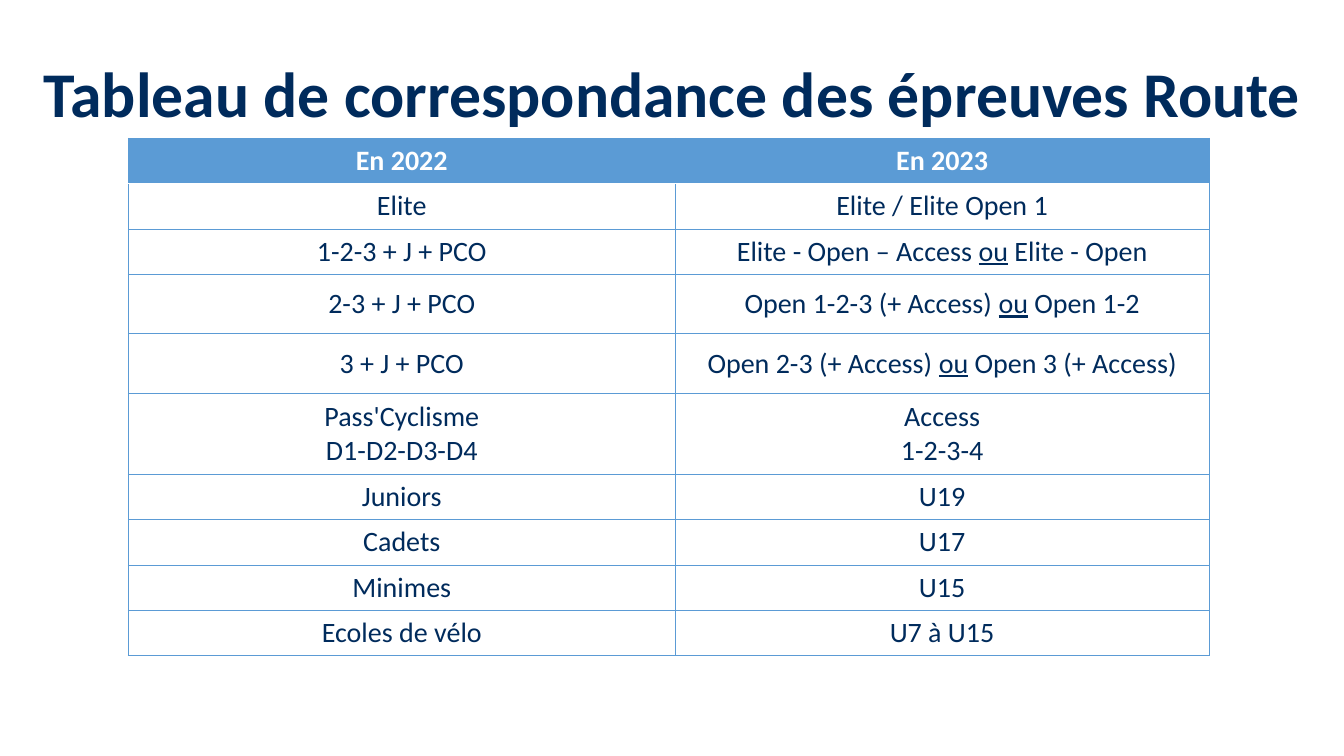
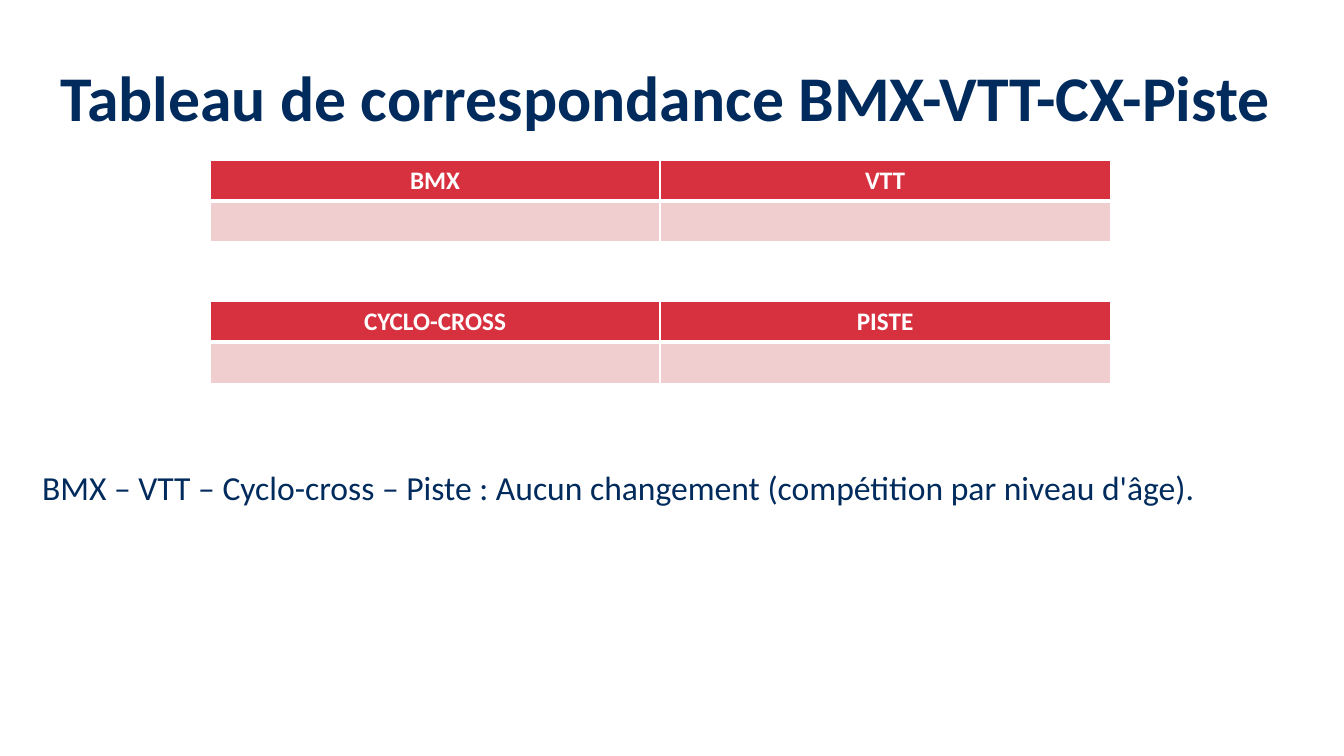
from pptx import Presentation
from pptx.dml.color import RGBColor
from pptx.enum.text import MSO_ANCHOR as Anchor, PP_ALIGN as Align
from pptx.oxml import parse_xml
from pptx.oxml.ns import nsdecls
from pptx.util import Pt

# Shared style
FONT = "Calibri"
NAVY, WHITE, BLUE, RED, PINK = "002B5C", "FFFFFF", "5B9BD5", "D7313F", "F0CECF"
MARGIN, CONTENT_W = 23, 914.5

# Content: underscores enclose underlined words
ROUTE = [
    ("En 2022", "En 2023"),
    ("Elite", "Elite / Elite Open 1"),
    ("1-2-3 + J + PCO", "Elite - Open – Access _ou_ Elite - Open"),
    ("2-3 + J + PCO", "Open 1-2-3 (+ Access) _ou_ Open 1-2"),
    ("3 + J + PCO", "Open 2-3 (+ Access) _ou_ Open 3 (+ Access)"),
    ("Pass'Cyclisme\nD1-D2-D3-D4", "Access\n1-2-3-4"),
    ("Juniors", "U19"),
    ("Cadets", "U17"),
    ("Minimes", "U15"),
    ("Ecoles de vélo", "U7 à U15"),
]
ROUTE_HEIGHTS = [32.4] * 3 + [42.5] * 2 + [57.9] + [32.4] * 4
DISCIPLINES = [("BMX", "VTT"), ("CYCLO-CROSS", "PISTE")]


def rgb(color):
    return RGBColor.from_string(color)


def write(tf, text, size, color, bold=False, align=Align.CENTER, spacing=None):
    for i, line in enumerate(text.split("\n")):
        p = tf.add_paragraph() if i else tf.paragraphs[0]
        p.alignment, p.line_spacing = align, spacing
        for j, part in enumerate(line.split("_")):
            r = p.add_run()
            r.text = part
            if j % 2:
                r.font.underline = True
        font = p.font
        font.name, font.size, font.bold = FONT, Pt(size), bold
        font.color.rgb = rgb(color)


def add_text(s, text, left, top, height, size, **style):
    tf = s.shapes.add_textbox(Pt(left), Pt(top), Pt(CONTENT_W), Pt(height)).text_frame
    tf.word_wrap = True
    tf.vertical_anchor = Anchor.MIDDLE
    write(tf, text, size, NAVY, **style)


def add_title(s, text, left, top):
    add_text(s, text, left, top, 65.5, 45.5, bold=True, spacing=0.75)


def set_borders(cell, left, right, top, bottom):
    tc_pr = cell._tc.get_or_add_tcPr()
    for i, (side, (color, width)) in enumerate(zip("LRTB", (left, right, top, bottom))):
        tc_pr.insert(i, parse_xml(
            f'<a:ln{side} {nsdecls("a")} w="{Pt(width)}"><a:solidFill>'
            f'<a:srgbClr val="{color}"/></a:solidFill></a:ln{side}>'))


def add_table(s, rows, left, top, widths, heights, size, header, body, line, rule,
              anchor=Anchor.TOP):
    """Header and body are fills; line is the cell border, rule the one below the header."""
    frame = s.shapes.add_table(len(rows), len(widths), Pt(left), Pt(top),
                               Pt(sum(widths)), Pt(sum(heights)))
    table = frame.table
    table.horz_banding = False
    for col, width in zip(table.columns, widths):
        col.width = Pt(width)
    for i, (texts, height) in enumerate(zip(rows, heights)):
        table.rows[i].height = Pt(height)
        for j, text in enumerate(texts):
            cell = table.cell(i, j)
            cell.vertical_anchor = anchor
            cell.fill.solid()
            cell.fill.fore_color.rgb = rgb(body if i else header)
            set_borders(cell, line, line, rule if i == 1 else line, line if i else rule)
            write(cell.text_frame, text, size, NAVY if i else WHITE, bold=not i)


def route_slide(s):
    add_title(s, "Tableau de correspondance des épreuves Route", MARGIN, 39)
    add_table(s, ROUTE, 91.5, 98.7, [391, 381], ROUTE_HEIGHTS, 20, BLUE, WHITE,
              (BLUE, 0.5), (WHITE, 1), Anchor.MIDDLE)


def disciplines_slide(s):
    add_title(s, "Tableau de correspondance BMX-VTT-CX-Piste", MARGIN - 5, 42)
    add_text(s, "BMX – VTT – Cyclo-cross – Piste : Aucun changement "
             "(compétition par niveau d'âge).", MARGIN, 332, 36, 24,
             align=Align.LEFT, spacing=0.9)
    for i, names in enumerate(DISCIPLINES):
        add_table(s, [names, ("", "")], 150, 114.5 + i * 100.8, [321.5] * 2, [29.2] * 2,
                  18, RED, PINK, (WHITE, 1), (WHITE, 3))


def main():
    prs = Presentation()
    prs.slide_width, prs.slide_height = Pt(960), Pt(540)
    for build in (route_slide, disciplines_slide):
        build(prs.slides.add_slide(prs.slide_layouts[6]))
    prs.save("out.pptx")


if __name__ == "__main__":
    main()
